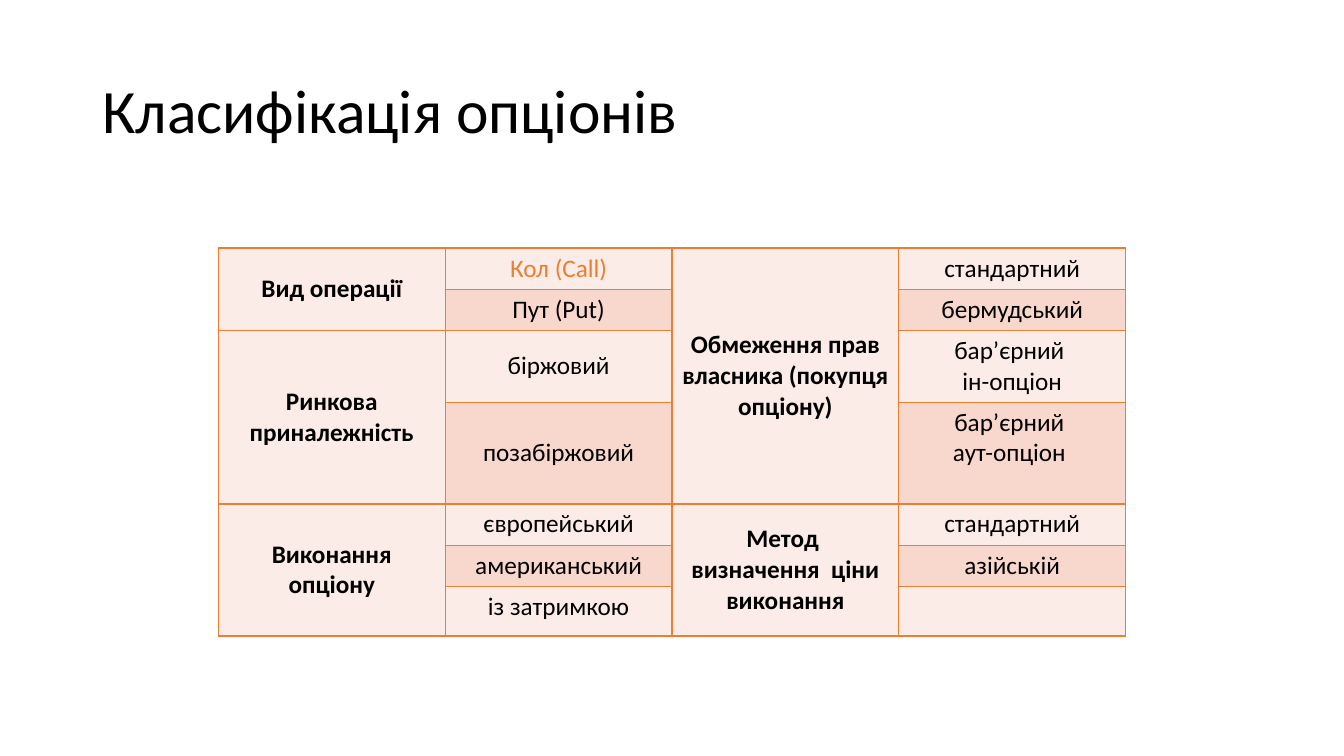
import pptx
import pptx.dml.color
import pptx.enum.text
import pptx.oxml
import pptx.oxml.ns
import pptx.util

RGBColor = pptx.dml.color.RGBColor
BLACK = RGBColor(0x00, 0x00, 0x00)
ORANGE = RGBColor(0xED, 0x7D, 0x31)
LIGHT_BAND = RGBColor(0xFB, 0xEC, 0xE7)
DARK_BAND = RGBColor(0xF8, 0xD7, 0xCD)

FONT = "Calibri"
SLIDE_WIDTH = pptx.util.Inches(13.333)
SLIDE_HEIGHT = pptx.util.Inches(7.5)
BORDER_WIDTH = pptx.util.Pt(0.96)
COLUMN_WIDTH = pptx.util.Inches(2.25)
COLUMN_COUNT = 4
ROW_HEIGHTS = [pptx.util.Inches(h) for h in (0.41, 0.41, 0.71, 1.01, 0.41, 0.41, 0.49)]
TABLE_LEFT = (SLIDE_WIDTH - COLUMN_COUNT * COLUMN_WIDTH) // 2
TABLE_TOP = pptx.util.Inches(2.46)

CENTER = pptx.enum.text.PP_ALIGN.CENTER
TOP = pptx.enum.text.MSO_ANCHOR.TOP
MIDDLE = pptx.enum.text.MSO_ANCHOR.MIDDLE

# Criteria: first row, column, rows covered, wording
CRITERIA = [
    (0, 0, 2, "Вид операції"),
    (2, 0, 2, "Ринкова приналежність"),
    (4, 0, 3, "Виконання опціону"),
    (0, 2, 4, "Обмеження прав власника (покупця опціону)"),
    (4, 2, 3, "Метод \nвизначення  ціни виконання"),
]

# Option kinds by column, top to bottom
KINDS = {
    1: ["Кол (Call)", "Пут (Put)", "біржовий", "позабіржовий",
        "європейський", "американський", "із затримкою"],
    3: ["стандартний", "бермудський", "бар’єрний \nін-опціон",
        "бар’єрний \nаут-опціон ", "стандартний", "азійській"],
}
HIGHLIGHTED = "Кол (Call)"
MIDDLE_KINDS = ("біржовий", "позабіржовий")


def add_run(paragraph, text, size, color=BLACK, bold=False):
    run = paragraph.add_run()
    run.text = text
    run.font.name = FONT
    run.font.size = pptx.util.Pt(size)
    run.font.bold = bold
    run.font.color.rgb = color


def add_title(slide, text):
    title = slide.shapes.add_textbox(
        int(SLIDE_WIDTH * 0.06875), int(SLIDE_HEIGHT * 0.053),
        int(SLIDE_WIDTH * 0.8625), int(SLIDE_HEIGHT * 0.193))
    frame = title.text_frame
    frame.word_wrap = True
    frame.vertical_anchor = MIDDLE
    frame.paragraphs[0].line_spacing = 0.9
    add_run(frame.paragraphs[0], text, 44)


def style_cell(cell, band):
    # Borders come before the fill in the cell properties
    properties = cell._tc.get_or_add_tcPr()
    for side in ("lnL", "lnR", "lnT", "lnB"):
        properties.append(pptx.oxml.parse_xml(
            f'<a:{side} {pptx.oxml.ns.nsdecls("a")} w="{BORDER_WIDTH}">'
            f'<a:solidFill><a:srgbClr val="{ORANGE}"/></a:solidFill></a:{side}>'))
    cell.fill.solid()
    cell.fill.fore_color.rgb = band


def fill_cell(cell, text, anchor, color=BLACK, bold=False):
    cell.vertical_anchor = anchor
    frame = cell.text_frame
    for index, line in enumerate(text.split("\n")):
        paragraph = frame.add_paragraph() if index else frame.paragraphs[0]
        paragraph.alignment = CENTER
        add_run(paragraph, line, 18, color, bold)


def add_classification(slide):
    table = slide.shapes.add_table(
        len(ROW_HEIGHTS), COLUMN_COUNT, TABLE_LEFT, TABLE_TOP,
        COLUMN_COUNT * COLUMN_WIDTH, sum(ROW_HEIGHTS)).table
    for row, height in zip(table.rows, ROW_HEIGHTS):
        row.height = height

    # Kinds alternate between bands; criteria stay light
    for row in range(len(ROW_HEIGHTS)):
        for column in range(COLUMN_COUNT):
            dark = column in KINDS and row % 2 == 1
            style_cell(table.cell(row, column), DARK_BAND if dark else LIGHT_BAND)

    for row, column, covered, text in CRITERIA:
        criterion = table.cell(row, column)
        criterion.merge(table.cell(row + covered - 1, column))
        fill_cell(criterion, text, MIDDLE, bold=True)

    for column, kinds in KINDS.items():
        for row, kind in enumerate(kinds):
            fill_cell(table.cell(row, column), kind,
                      MIDDLE if kind in MIDDLE_KINDS else TOP,
                      ORANGE if kind == HIGHLIGHTED else BLACK)


def main():
    presentation = pptx.Presentation()
    presentation.slide_width = SLIDE_WIDTH
    presentation.slide_height = SLIDE_HEIGHT
    slide = presentation.slides.add_slide(presentation.slide_layouts[6])
    add_title(slide, "Класифікація опціонів")
    add_classification(slide)
    presentation.save("out.pptx")


if __name__ == "__main__":
    main()
